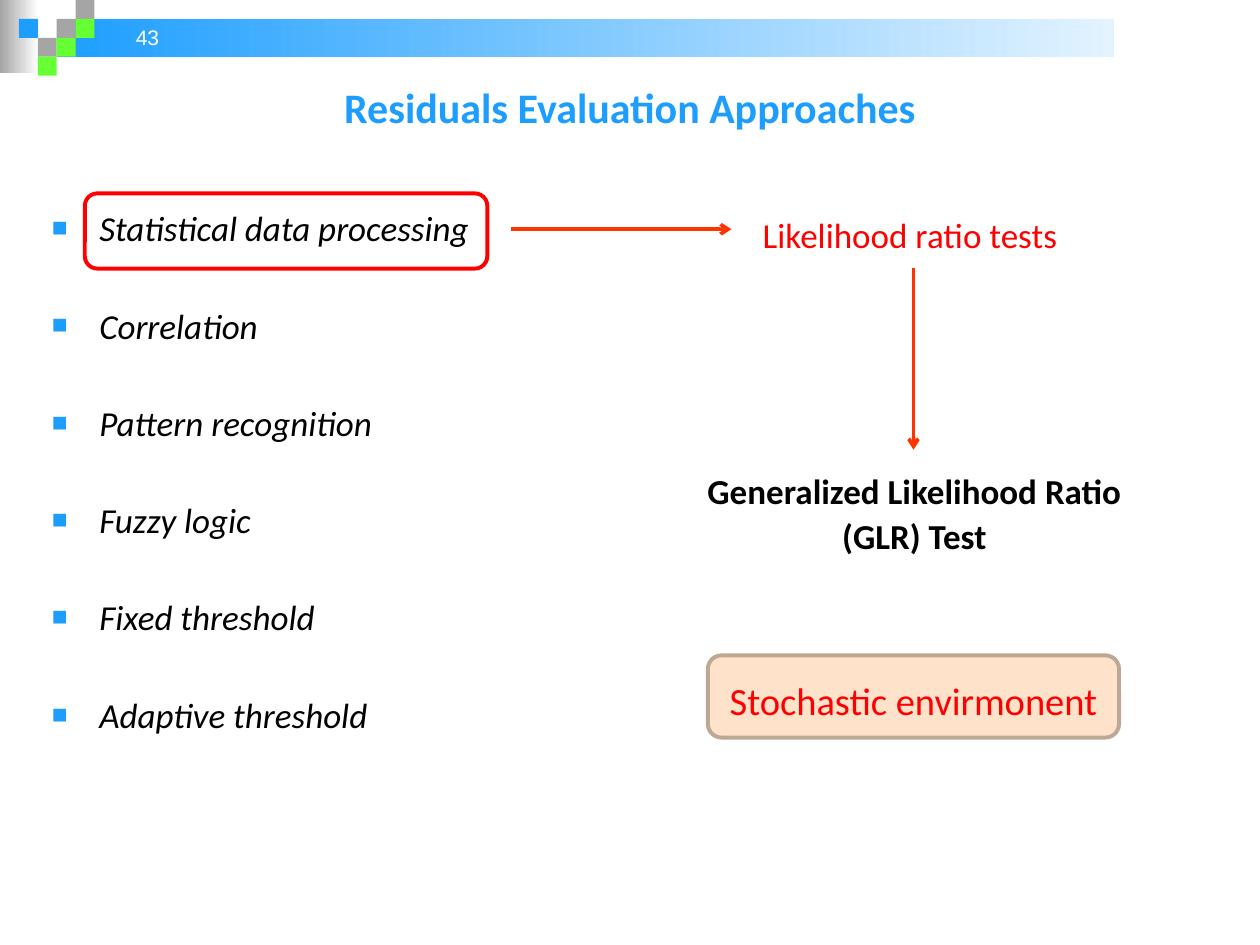
from lxml import etree
from pptx import Presentation
from pptx.dml.color import RGBColor
from pptx.enum import shapes, text
from pptx.oxml import ns
from pptx.util import Pt

COLORS = {
    "blue": "1D9EFF", "pale blue": "E3F3FF", "gray": "A5A5A5",
    "green": "66FF33", "white": "FFFFFF", "black": "000000",
    "red": "FF0000", "arrow": "FF3300", "peach": "FFE2CA", "tan": "BDA795",
}
METHODS = ["Statistical data processing", "Correlation", "Pattern recognition",
           "Fuzzy logic", "Fixed threshold", "Adaptive threshold"]
CELL = 10.8
BLOCKS = [(2, 1, "gray"), (3, 0, "gray"), (3, 1, "green"), (1, 2, "gray"),
          (0, 1, "blue"), (2, 2, "green"), (1, 3, "green")]


def rgb(name):
    return RGBColor.from_string(COLORS[name])


def place(sp, box):
    for name, value in zip(("left", "top", "width", "height"), box):
        setattr(sp, name, Pt(value))


def add_xml(parent, tag, **attrs):
    return etree.SubElement(parent, ns.qn(tag), attrs)


def write(p, words, color, align=text.PP_ALIGN.CENTER, spacing=None, **font):
    """Set one paragraph's text and format; font holds font attributes."""
    r = p.add_run()
    r.text = words
    p.alignment = align
    if spacing:
        p.line_spacing = spacing
    for name, value in {"name": "Calibri", "size": Pt(20), **font}.items():
        setattr(r.font, name, value)
    r.font.color.rgb = rgb(color)


def add_box(s, kind, box, fill=None, line=None):
    """Add a preset shape; a pair of fill colours makes a gradient."""
    sp = s.shapes.add_shape(kind, *map(Pt, box))
    sp.shadow.inherit = False
    if isinstance(fill, tuple):
        sp.fill.gradient()
        sp.fill.gradient_angle = 0
        for stop, name in zip(sp.fill.gradient_stops, fill):
            stop.color.rgb = rgb(name)
    elif fill:
        sp.fill.solid()
        sp.fill.fore_color.rgb = rgb(fill)
    else:
        sp.fill.background()
    if line:
        sp.line.color.rgb = rgb(line)
        sp.line.width = Pt(2.25)
    else:
        sp.line.fill.background()
    return sp


def add_label(s, box, words, color, anchor=text.MSO_ANCHOR.TOP, **fmt):
    tf = s.shapes.add_textbox(*map(Pt, box)).text_frame
    tf.word_wrap = True
    tf.vertical_anchor = anchor
    write(tf.paragraphs[0], words, color, **fmt)


def add_arrow(s, *ends):
    line = s.shapes.add_connector(shapes.MSO_CONNECTOR.STRAIGHT, *map(Pt, ends))
    line.line.color.rgb = rgb("arrow")
    line.line.width = Pt(2)
    add_xml(line.line._get_or_add_ln(), "a:tailEnd", type="arrow")
    add_xml(line._element.spPr, "a:effectLst")


def add_header(s):
    rect = shapes.MSO_SHAPE.RECTANGLE
    add_box(s, rect, (0, 0, 22, 42), ("gray", "white"))
    add_box(s, rect, (32.4, CELL, 604, 21.6), ("blue", "pale blue"))
    for col, row, color in BLOCKS:
        left = 10.8 * (col + 1)
        add_box(s, rect, (left, row * CELL, CELL, CELL), color)
    add_label(s, (27, 6.5, 71, 29), "43", "white", text.MSO_ANCHOR.MIDDLE,
              align=text.PP_ALIGN.RIGHT, name="Arial", size=Pt(12))


def fill_title(title):
    place(title, (36, 32, 648, 58))
    title.text_frame.vertical_anchor = text.MSO_ANCHOR.MIDDLE
    write(title.text_frame.paragraphs[0], "Residuals Evaluation Approaches",
          "blue", size=Pt(24), bold=True)


def fill_methods(body):
    place(body, (22.5, 114.5, 681, 323))
    tf = body.text_frame
    tf.auto_size = text.MSO_AUTO_SIZE.NONE
    for i, method in enumerate(METHODS):
        p = tf.add_paragraph() if i else tf.paragraphs[0]
        pPr = p._p.get_or_add_pPr()
        pPr.set("marL", str(Pt(27)))
        pPr.set("indent", str(Pt(-27)))
        add_xml(add_xml(pPr, "a:buClr"), "a:srgbClr", val=COLORS["blue"])
        add_xml(pPr, "a:buSzPct", val="75000")
        add_xml(pPr, "a:buFont", typeface="Arial")
        add_xml(pPr, "a:buChar", char="■")
        p.space_before = Pt(31.6 if i else 0)
        write(p, method, "black", text.PP_ALIGN.LEFT, italic=True)


def main():
    prs = Presentation()
    prs.slide_width, prs.slide_height = Pt(720), Pt(540)
    s = prs.slides.add_slide(prs.slide_layouts[1])
    add_header(s)
    fill_title(s.shapes.title)
    fill_methods(s.placeholders[1])

    rounded = shapes.MSO_SHAPE.ROUNDED_RECTANGLE
    add_box(s, rounded, (48.5, 110.5, 230, 43), line="red")
    add_arrow(s, 292, 131, 418, 131)
    add_label(s, (427, 116.5, 186, 29), "Likelihood ratio tests", "red",
              spacing=1.07)
    add_arrow(s, 522, 153, 522, 257)
    add_label(s, (391, 263, 263, 29), "Generalized Likelihood Ratio (GLR) Test",
              "black", spacing=1.07, bold=True)
    sp = add_box(s, rounded, (404.5, 374.5, 235, 47), "peach", "tan")
    sp.text_frame.vertical_anchor = text.MSO_ANCHOR.TOP
    write(sp.text_frame.paragraphs[0], "Stochastic envirmonent", "red",
          spacing=1.25, size=Pt(22))
    prs.save("out.pptx")


if __name__ == "__main__":
    main()
